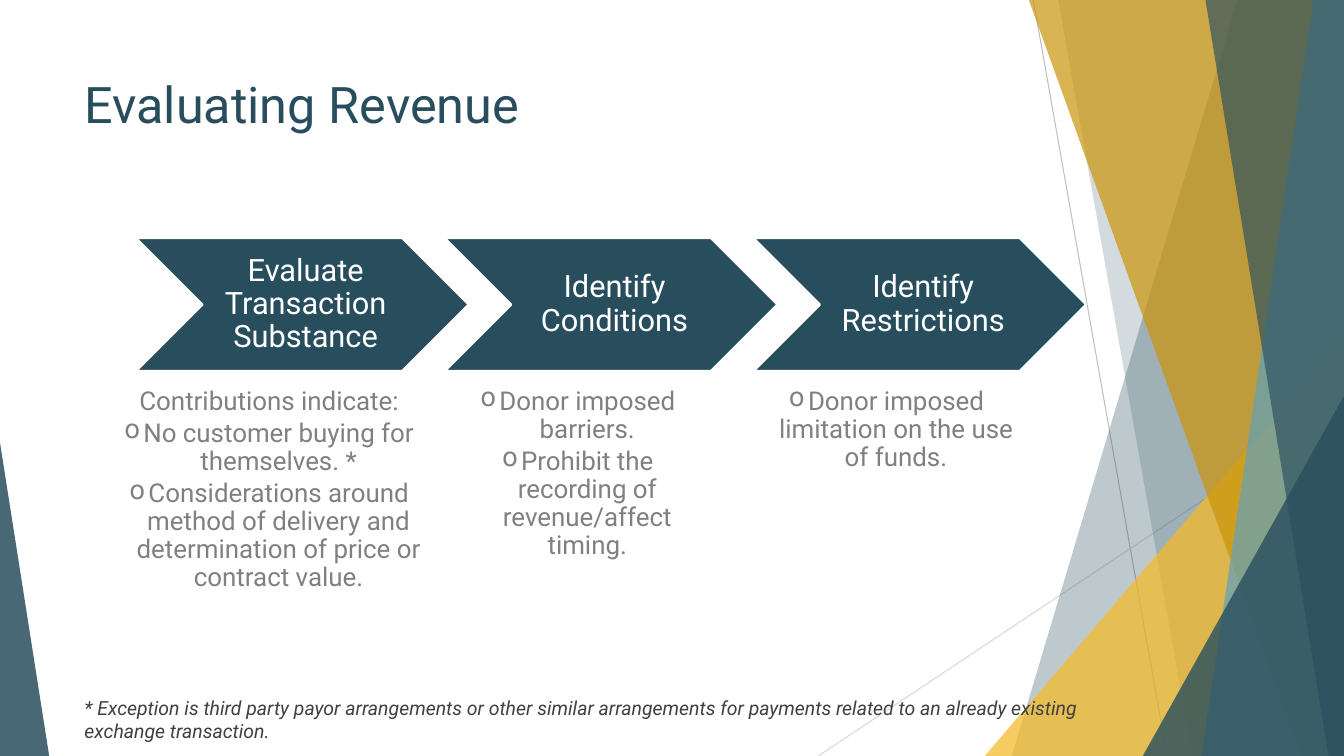
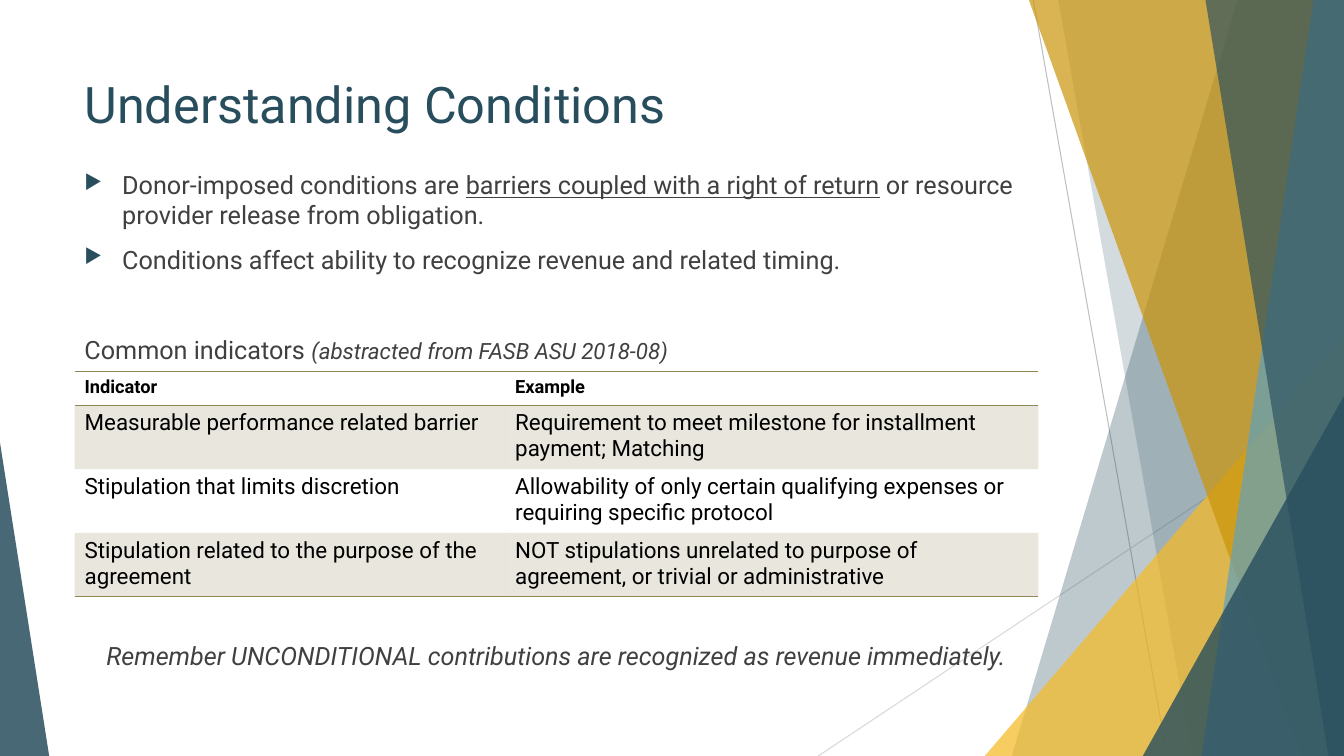
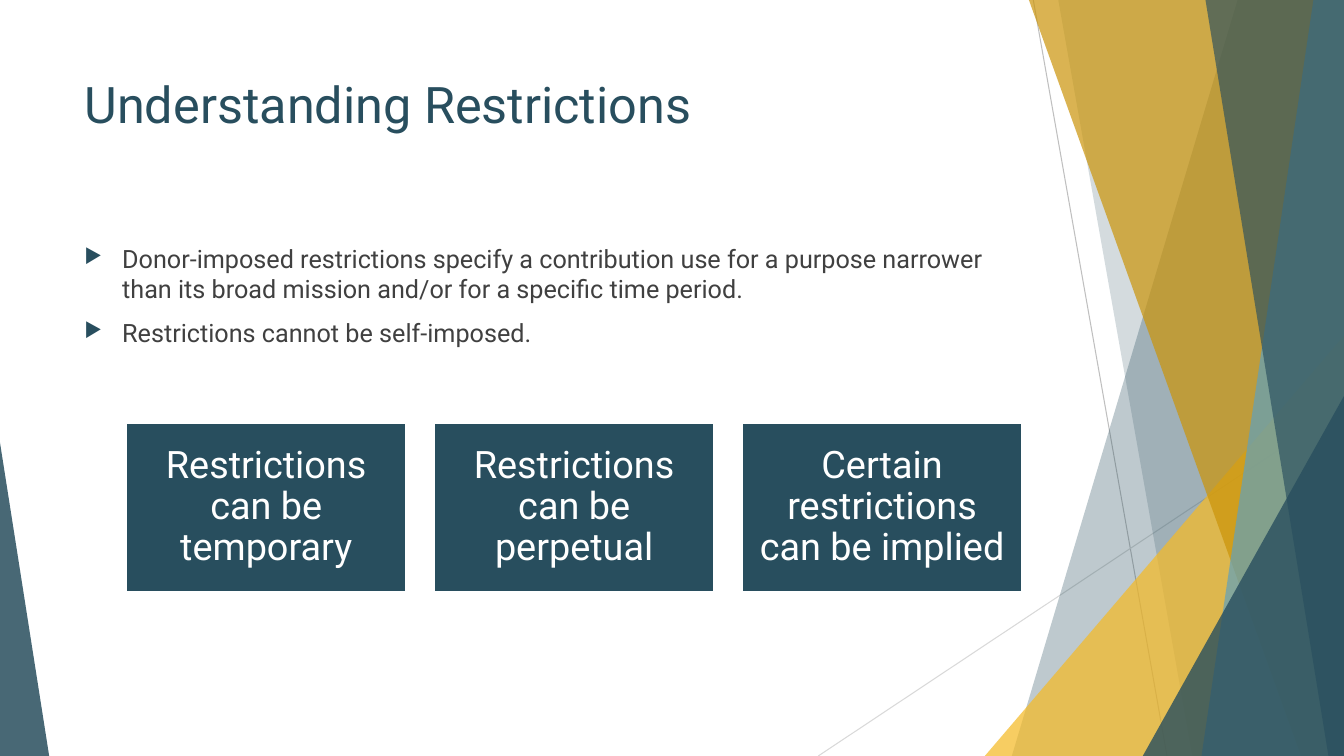
from lxml import etree
from pptx import Presentation
from pptx.dml.color import RGBColor
from pptx.enum.shapes import MSO_CONNECTOR, MSO_SHAPE
from pptx.enum.text import MSO_ANCHOR, MSO_AUTO_SIZE, PP_ALIGN
from pptx.oxml.ns import qn
from pptx.util import Cm, Pt

STRAIGHT = MSO_CONNECTOR.STRAIGHT
CHEVRON, RECTANGLE = MSO_SHAPE.CHEVRON, MSO_SHAPE.RECTANGLE
TRIANGLE = MSO_SHAPE.ISOSCELES_TRIANGLE
TOP, MIDDLE = MSO_ANCHOR.TOP, MSO_ANCHOR.MIDDLE
LEFT, CENTER = PP_ALIGN.LEFT, PP_ALIGN.CENTER
NO_AUTOFIT = MSO_AUTO_SIZE.NONE

TEAL = RGBColor(0x28, 0x4E, 0x5E)
SKY = RGBColor(0x61, 0xA1, 0xBC)
YELLOW = RGBColor(0xF5, 0xBA, 0x26)
OCHRE = RGBColor(0xCB, 0x94, 0x09)
OLIVE = RGBColor(0x91, 0x86, 0x55)
WHITE = RGBColor(0xFF, 0xFF, 0xFF)
BLACK = RGBColor(0, 0, 0)
DARK_GRAY = RGBColor(0x40, 0x40, 0x40)
MID_GRAY = RGBColor(0x80, 0x80, 0x80)
LINE_GRAY = RGBColor(0xBF, 0xBF, 0xBF)
PALE_GRAY = RGBColor(0xD9, 0xD9, 0xD9)

FONT = "Roboto"
WIDTH, HEIGHT = 33.87, 19.05
MARGIN = 1.88
BODY_WIDTH = 24.28
NO_GRID_STYLE = "{2D5ABB26-0587-4C30-8999-92F81FD0307C}"


class Deck:
    """Hold the shared style and the slide being filled."""

    def __init__(self):
        """Open an empty widescreen presentation."""
        self.presentation = Presentation()
        self.presentation.slide_width = Cm(WIDTH)
        self.presentation.slide_height = Cm(HEIGHT)
        self.layout = self.presentation.slide_layouts[5]
        for placeholder in list(self.layout.placeholders)[1:]:
            placeholder.element.getparent().remove(placeholder.element)
        self.slide = None

    def add_slide(self, title):
        """Start a slide with a styled title."""
        self.slide = self.presentation.slides.add_slide(self.layout)
        shape = self.slide.shapes.title
        shape.left, shape.top = Cm(MARGIN), Cm(1.7)
        shape.width, shape.height = Cm(23.88), Cm(3.66)
        frame = self.prepare(shape, TOP)
        frame.paragraphs[0].alignment = LEFT
        self.add_run(frame.paragraphs[0], title, 36, TEAL)

    def prepare(self, shape, anchor, insets=(0.25, 0.13, 0.25, 0.13)):
        """Set wrapping, anchor and insets, and return the text frame."""
        frame = shape.text_frame
        frame.word_wrap = True
        frame.auto_size = NO_AUTOFIT
        frame.vertical_anchor = anchor
        (frame.margin_left, frame.margin_top,
         frame.margin_right, frame.margin_bottom) = map(Cm, insets)
        return frame

    def add_run(self, paragraph, text, size, color, **emphasis):
        """Add one run; emphasis may be bold, italic or underline."""
        run = paragraph.add_run()
        run.text = text
        run.font.name = FONT
        run.font.size = Pt(size)
        run.font.color.rgb = color
        for name, value in emphasis.items():
            setattr(run.font, name, value)

    def add_bullet(self, paragraph, symbol, indent, color=None, percent=100):
        """Give a paragraph a hanging indent and, with a symbol, a bullet."""
        properties = paragraph._p.get_or_add_pPr()
        properties.set("marL", str(Cm(indent)))
        properties.set("indent", str(-Cm(indent)))
        if not symbol:
            return
        if color is not None:
            holder = etree.SubElement(properties, qn("a:buClr"))
            etree.SubElement(holder, qn("a:srgbClr"), val=str(color))
        etree.SubElement(properties, qn("a:buSzPct"), val=str(percent * 1000))
        etree.SubElement(properties, qn("a:buChar"), char=symbol)

    def add_box(self, left, top, width, height, **options):
        """Add a text box and return its frame."""
        box = self.slide.shapes.add_textbox(Cm(left), Cm(top), Cm(width), Cm(height))
        return self.prepare(box, TOP, **options)

    def add_line_of_text(self, top, height, runs, alignment=LEFT, width=BODY_WIDTH):
        """Add a one-paragraph box at the margin from (text, size, emphasis) runs."""
        paragraph = self.add_box(MARGIN, top, width, height).paragraphs[0]
        paragraph.alignment = alignment
        for text, size, emphasis in runs:
            self.add_run(paragraph, text, size, DARK_GRAY, **emphasis)

    def add_body(self, top, items):
        """Add arrow-bulleted points, each a list of (text, underline) runs."""
        frame = self.add_box(MARGIN, top, BODY_WIDTH, 3.3)
        for index, runs in enumerate(items):
            paragraph = frame.add_paragraph() if index else frame.paragraphs[0]
            self.add_bullet(paragraph, "▶", 0.95, TEAL, 80)
            if index:
                paragraph.space_before = Pt(10)
            for text, underline in runs:
                self.add_run(paragraph, text, 18, DARK_GRAY, underline=underline)

    def add_details(self, center, width, items):
        """Add centred grey notes, each a (bullet, text) pair, about a centre."""
        frame = self.add_box(center - width / 2, 9.78, width, 5.08, insets=(0, 0, 0, 0))
        for index, (symbol, text) in enumerate(items):
            paragraph = frame.add_paragraph() if index else frame.paragraphs[0]
            self.add_bullet(paragraph, symbol, 0.48)
            paragraph.alignment = CENTER
            paragraph.line_spacing = 0.9
            paragraph.space_after = Pt(3)
            self.add_run(paragraph, text, 18.5, MID_GRAY)

    def add_block(self, preset, place, text, size, insets):
        """Add a teal shape with centred white text."""
        shape = self.slide.shapes.add_shape(preset, *map(Cm, place))
        self.paint(shape, TEAL)
        shape.line.color.rgb = WHITE
        shape.line.width = Pt(1.5)
        paragraph = self.prepare(shape, MIDDLE, insets).paragraphs[0]
        paragraph.alignment = CENTER
        paragraph.line_spacing = 0.9
        self.add_run(paragraph, text, size, WHITE)

    def set_opacity(self, element, opacity):
        """Make the solid fill directly under an element see-through."""
        color = element.find(qn("a:solidFill") + "/" + qn("a:srgbClr"))
        etree.SubElement(color, qn("a:alpha"), val=str(opacity * 1000))

    def paint(self, shape, color, opacity=100):
        """Fill a shape without outline or shadow."""
        shape.shadow.inherit = False
        shape.fill.solid()
        shape.fill.fore_color.rgb = color
        shape.line.fill.background()
        if opacity < 100:
            self.set_opacity(shape.element.spPr, opacity)

    def add_ray(self, start, end, color):
        """Add a thin straight line."""
        line = self.slide.shapes.add_connector(STRAIGHT, *map(Cm, start + end))
        line.line.color.rgb = color
        line.line.width = Pt(0.75)
        etree.SubElement(line.element.spPr, qn("a:effectLst"))

    def add_band(self, top_x, bottom_x, color, opacity):
        """Add a full-height band from a slanted edge to the right border."""
        builder = self.slide.shapes.build_freeform(Cm(top_x), 0)
        corners = [(WIDTH, 0), (WIDTH, HEIGHT), (bottom_x, HEIGHT)]
        builder.add_line_segments([(Cm(x), Cm(y)) for x, y in corners])
        self.paint(builder.convert_to_shape(), color, opacity)

    def add_triangle(self, left, right, top, apex, color, opacity):
        """Add a triangle standing on the bottom border."""
        shape = self.slide.shapes.add_shape(
            TRIANGLE, Cm(left), Cm(top), Cm(right - left), Cm(HEIGHT - top))
        shape.adjustments[0] = apex
        self.paint(shape, color, opacity)

    def add_backdrop(self):
        """Draw the shared artwork and move it into the layout."""
        self.add_ray((26.04, 0), (29.41, HEIGHT), LINE_GRAY)
        self.add_ray((WIDTH, 10.24), (20.62, HEIGHT), PALE_GRAY)
        self.add_band(31.19, 25.5, TEAL, 30)
        self.add_band(26.67, 30.05, TEAL, 20)
        self.add_triangle(24.82, WIDTH, 8.46, 1, YELLOW, 72)
        self.add_band(25.93, 32.79, OCHRE, 70)
        self.add_band(33.1, 30.28, SKY, 70)
        self.add_band(30.38, 33.48, TEAL, 65)
        self.add_triangle(28.8, WIDTH, 9.98, 1, TEAL, 80)
        self.add_triangle(0, 1.24, 11.15, 0, TEAL, 85)
        for shape in list(self.slide.shapes)[1:]:
            self.layout.shapes.element.append(shape.element)

    def add_border(self, cell, side):
        """Draw one olive cell border; side is lnT or lnB."""
        properties = cell._tc.get_or_add_tcPr()
        line = etree.SubElement(properties, qn("a:" + side), w=str(Pt(1)))
        fill = etree.SubElement(line, qn("a:solidFill"))
        etree.SubElement(fill, qn("a:srgbClr"), val=str(OLIVE))

    def add_table(self, top, widths, heights, rows):
        """Add a ruled table with a bold header and tinted odd rows."""
        graphic = self.slide.shapes.add_table(
            len(rows), len(widths), Cm(MARGIN), Cm(top), Cm(sum(widths)), Cm(sum(heights)))
        table = graphic.table
        table.first_row = table.horz_banding = False
        next(graphic.element.iter(qn("a:tableStyleId"))).text = NO_GRID_STYLE
        for column, width in zip(table.columns, widths):
            column.width = Cm(width)
        borders = {0: ("lnT", "lnB"), len(rows) - 1: ("lnB",)}
        for row_index, texts in enumerate(rows):
            table.rows[row_index].height = Cm(heights[row_index])
            header = row_index == 0
            for column_index, text in enumerate(texts):
                cell = table.cell(row_index, column_index)
                for side in borders.get(row_index, ()):
                    self.add_border(cell, side)
                if row_index % 2:
                    cell.fill.solid()
                    cell.fill.fore_color.rgb = OLIVE
                    self.set_opacity(cell._tc.tcPr, 20)
                else:
                    cell.fill.background()
                self.add_run(cell.text_frame.paragraphs[0], text,
                             13 if header else 16, BLACK, bold=header)


def build_revenue(deck):
    """Fill the slide on evaluating revenue."""
    deck.add_slide("Evaluating Revenue")
    deck.add_backdrop()
    steps = [
        ("Evaluate Transaction Substance", 8.08, [
            ("", "Contributions indicate:"),
            ("o", "No customer buying for themselves. *"),
            ("o", "Considerations around method of delivery and "
                  "determination of price or contract value."),
        ]),
        ("Identify Conditions", 6.71, [
            ("o", "Donor imposed barriers."),
            ("o", "Prohibit the recording of revenue/affect timing."),
        ]),
        ("Identify Restrictions", 6.71, [
            ("o", "Donor imposed limitation on the use of funds."),
        ]),
    ]
    for index, (name, width, details) in enumerate(steps):
        left = 3.43 + 7.78 * index
        deck.add_block(CHEVRON, (left, 6, 8.38, 3.35), name, 22, (0.25, 0.08, 0.08, 0.08))
        deck.add_details(left + 3.35, width, details)
    deck.add_line_of_text(17.4, 1.5, [
        ("* Exception is third party payor arrangements or other similar arrangements "
         "for payments related to an already existing exchange transaction.",
         13.9, {"italic": True}),
    ], width=25.91)


def build_conditions(deck):
    """Fill the slide on conditions."""
    deck.add_slide("Understanding Conditions")
    deck.add_body(4.14, [
        [("Donor-imposed conditions are ", False),
         ("barriers coupled with a right of return", True),
         (" or resource provider release from obligation.", False)],
        [("Conditions affect ability to recognize revenue and related timing.", False)],
    ])
    deck.add_line_of_text(8.29, 1, [
        ("Common indicators ", 18, {}),
        ("(abstracted from FASB ASU 2018-08)", 16, {"italic": True}),
    ])
    deck.add_table(9.37, (10.85, 13.44), (0.84, 1.61, 1.61, 1.61), [
        ("Indicator", "Example"),
        ("Measurable performance related barrier",
         "Requirement to meet milestone for installment payment; Matching"),
        ("Stipulation that limits discretion",
         "Allowability of only certain qualifying expenses or requiring specific protocol"),
        ("Stipulation related to the purpose of the agreement",
         "NOT stipulations unrelated to purpose of agreement, or trivial or administrative"),
    ])
    deck.add_line_of_text(16, 1, [
        ("Remember UNCONDITIONAL contributions are recognized as revenue immediately.",
         18, {"italic": True}),
    ], CENTER)


def build_restrictions(deck):
    """Fill the slide on restrictions."""
    deck.add_slide("Understanding Restrictions")
    deck.add_body(6, [
        [("Donor-imposed restrictions specify a contribution use for a purpose narrower "
          "than its broad mission and/or for a specific time period.", False)],
        [("Restrictions cannot be self-imposed.", False)],
    ])
    kinds = ("Restrictions can be temporary", "Restrictions can be perpetual",
             "Certain restrictions can be implied")
    for index, kind in enumerate(kinds):
        place = (3.18 + 7.76 * index, 10.67, 7.06, 4.24)
        deck.add_block(RECTANGLE, place, kind, 27, (0.28,) * 4)


def main():
    """Build and save the presentation."""
    deck = Deck()
    build_revenue(deck)
    build_conditions(deck)
    build_restrictions(deck)
    deck.presentation.save("out.pptx")


if __name__ == "__main__":
    main()
